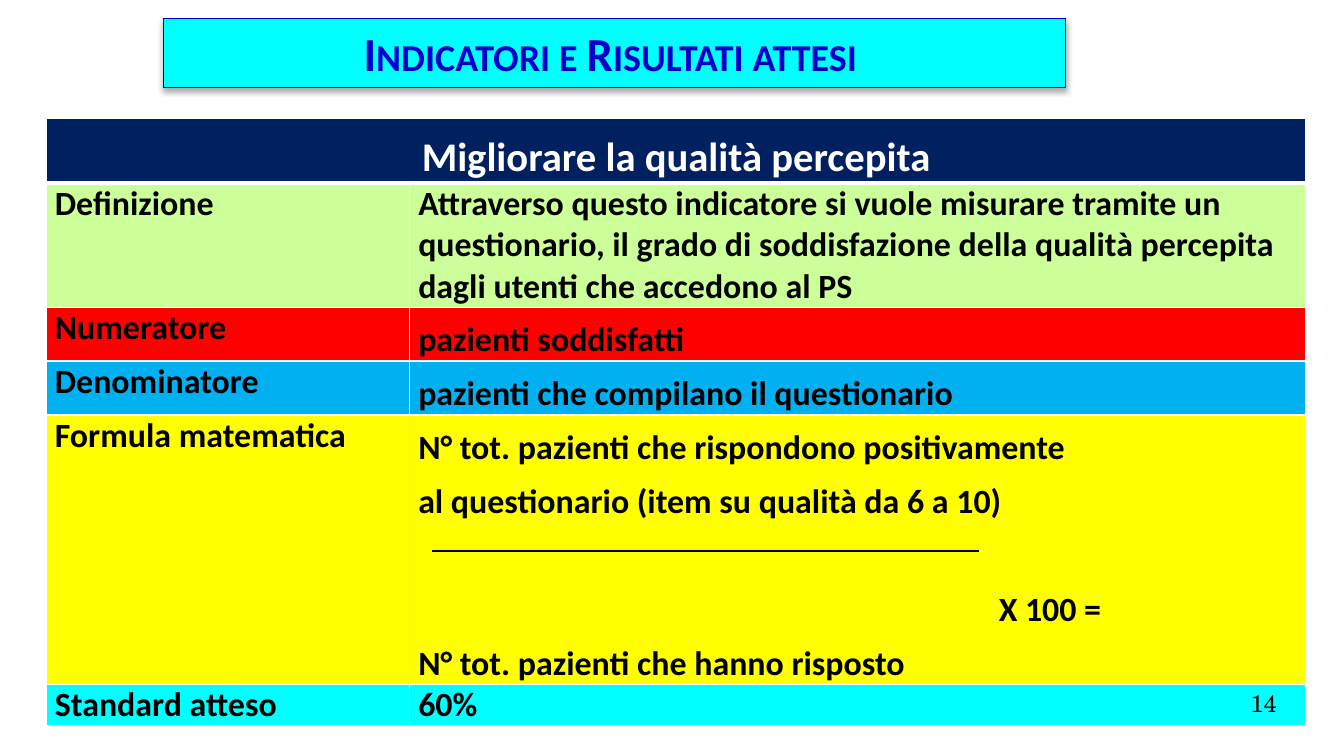
from dataclasses import dataclass

from lxml.etree import SubElement
from pptx import Presentation
from pptx.dml.color import RGBColor
from pptx.enum.shapes import MSO_CONNECTOR, MSO_SHAPE
from pptx.enum.text import MSO_ANCHOR, PP_ALIGN as Align
from pptx.oxml import parse_xml
from pptx.oxml.ns import nsdecls, qn
from pptx.table import _Cell as Cell
from pptx.text.text import TextFrame, _Paragraph as Paragraph
from pptx.util import Inches, Pt

WHITE = RGBColor(0xFF, 0xFF, 0xFF)
BLACK = RGBColor(0, 0, 0)
NAVY = RGBColor(0, 0x20, 0x60)
BLUE = RGBColor(0, 0, 0xCC)
CYAN = RGBColor(0, 0xFF, 0xFF)
LIME = RGBColor(0xCC, 0xFF, 0x99)
RED = RGBColor(0xFF, 0, 0)
SKY = RGBColor(0, 0xB0, 0xF0)
YELLOW = RGBColor(0xFF, 0xFF, 0)

COLUMN_WIDTHS = (2.98, 7.35)


@dataclass(frozen=True)
class Line:
    text: str
    align: Align = Align.LEFT
    spacing: float = 1.0
    before: float = 0
    after: float = 0
    indent: float = 0


@dataclass(frozen=True)
class Row:
    label: str
    lines: tuple[Line, ...]
    fill: RGBColor
    height: float


HEADING = Line("Migliorare la qualità percepita", Align.CENTER, 1.3, after=8)
HEADING_HEIGHT = 0.39
ROWS = (
    Row("Definizione",
        (Line("Attraverso questo indicatore si vuole misurare tramite un questionario, "
              "il grado di soddisfazione della qualità percepita dagli utenti che "
              "accedono al PS", after=8),), LIME, 0.93),
    Row("Numeratore", (Line("pazienti soddisfatti", Align.JUSTIFY, 1.3),), RED, 0.39),
    Row("Denominatore",
        (Line("pazienti che compilano il questionario", Align.JUSTIFY, 1.3, after=2.3),),
        SKY, 0.39),
    Row("Formula matematica",
        (Line("N° tot. pazienti che rispondono positivamente", Align.JUSTIFY, 1.3),
         Line("al questionario (item su qualità da 6 a 10)", spacing=1.3),
         Line("X 100 =", spacing=1.3, before=31.7, indent=4.76),
         Line("N° tot. pazienti che hanno risposto", Align.JUSTIFY, 1.3, after=2.3)),
        YELLOW, 1.57),
    Row("Standard atteso", (Line("60%", after=8),), CYAN, 0.31),
)


def write_line(paragraph: Paragraph, line: Line, size: float, color: RGBColor,
               font: str = "Calibri", bold: bool = True) -> None:
    paragraph.alignment = line.align
    paragraph.line_spacing = line.spacing
    paragraph.space_before = Pt(line.before)
    paragraph.space_after = Pt(line.after)
    if line.indent:
        paragraph._p.get_or_add_pPr().set("marL", str(Inches(line.indent)))
    run = paragraph.add_run()
    run.text = line.text
    run.font.size = Pt(size)
    run.font.name = font
    run.font.bold = bold
    run.font.color.rgb = color


def remove_margins(frame: TextFrame) -> None:
    frame.margin_left = frame.margin_right = frame.margin_top = frame.margin_bottom = 0


def draw_borders(cell: Cell, top: float = 1, bottom: float = 1) -> None:
    properties = cell._tc.get_or_add_tcPr()
    for side, width in (("L", 1), ("R", 1), ("T", top), ("B", bottom)):
        border = SubElement(properties, qn(f"a:ln{side}"), w=str(Pt(width)))
        fill = SubElement(border, qn("a:solidFill"))
        SubElement(fill, qn("a:srgbClr"), val=str(WHITE))


def fill_cell(cell: Cell, lines: tuple[Line, ...], fill: RGBColor,
              size: float = 20, color: RGBColor = BLACK) -> None:
    cell.margin_left = cell.margin_right = Inches(0.07)
    cell.margin_top = cell.margin_bottom = 0
    cell.fill.solid()
    cell.fill.fore_color.rgb = fill
    frame = cell.text_frame
    for index, line in enumerate(lines):
        paragraph = frame.add_paragraph() if index else frame.paragraphs[0]
        write_line(paragraph, line, size, color)


def add_indicator_table(shapes) -> None:
    heights = [HEADING_HEIGHT] + [row.height for row in ROWS]
    table = shapes.add_table(
        len(heights), len(COLUMN_WIDTHS), Inches(0.38), Inches(0.97),
        Inches(sum(COLUMN_WIDTHS)), Inches(sum(heights))).table
    table.first_row = table.horz_banding = False
    for column, width in zip(table.columns, COLUMN_WIDTHS):
        column.width = Inches(width)
    for table_row, height in zip(table.rows, heights):
        table_row.height = Inches(height)

    heading = table.cell(0, 0)
    heading.merge(table.cell(0, 1))
    for column in range(2):
        draw_borders(table.cell(0, column), bottom=3)
    fill_cell(heading, (HEADING,), NAVY, 24, WHITE)

    for index, row in enumerate(ROWS, start=1):
        for column, lines in enumerate(((Line(row.label, after=8),), row.lines)):
            cell = table.cell(index, column)
            draw_borders(cell, top=3 if index == 1 else 1)
            fill_cell(cell, lines, row.fill)


def add_fraction_bar(shapes) -> None:
    bar = shapes.add_connector(MSO_CONNECTOR.STRAIGHT, Inches(3.54), Inches(4.52),
                               Inches(8.03), Inches(4.52))
    bar.line.color.rgb = BLACK
    bar.line.width = Pt(1.39)
    SubElement(bar._element.spPr, qn("a:effectLst"))


def add_title(shapes) -> None:
    title = shapes.add_shape(MSO_SHAPE.RECTANGLE, Inches(1.34), Inches(0.15),
                             Inches(7.4), Inches(0.57))
    title.fill.solid()
    title.fill.fore_color.rgb = CYAN
    title.line.color.rgb = BLUE
    title.line.width = Pt(0.75)
    title._element.spPr.append(parse_xml(
        f'<a:effectLst {nsdecls("a")}>'
        f'<a:outerShdw blurRad="{Pt(3.5)}" dist="{Pt(2.2)}" dir="5400000" rotWithShape="0">'
        f'<a:srgbClr val="{BLACK}"><a:alpha val="32000"/></a:srgbClr>'
        '</a:outerShdw></a:effectLst>'))
    frame = title.text_frame
    frame.word_wrap = True
    frame.vertical_anchor = MSO_ANCHOR.MIDDLE
    paragraph = frame.paragraphs[0]
    write_line(paragraph, Line("Indicatori e Risultati attesi ", Align.CENTER), 28, BLUE)
    paragraph.runs[0].font._element.set("cap", "small")


def add_page_number(shapes) -> None:
    number = shapes.add_textbox(Inches(7.9), Inches(5.65), Inches(2.57), Inches(0.43))
    frame = number.text_frame
    frame.word_wrap = True
    remove_margins(frame)
    write_line(frame.paragraphs[0], Line("14", Align.RIGHT), 14, BLACK,
               "TeX Gyre Schola", bold=False)


def main() -> None:
    deck = Presentation()
    deck.slide_width, deck.slide_height = Inches(11.02), Inches(6.2)
    shapes = deck.slides.add_slide(deck.slide_layouts[6]).shapes
    add_indicator_table(shapes)
    add_fraction_bar(shapes)
    add_title(shapes)
    add_page_number(shapes)
    deck.save("out.pptx")


if __name__ == "__main__":
    main()
